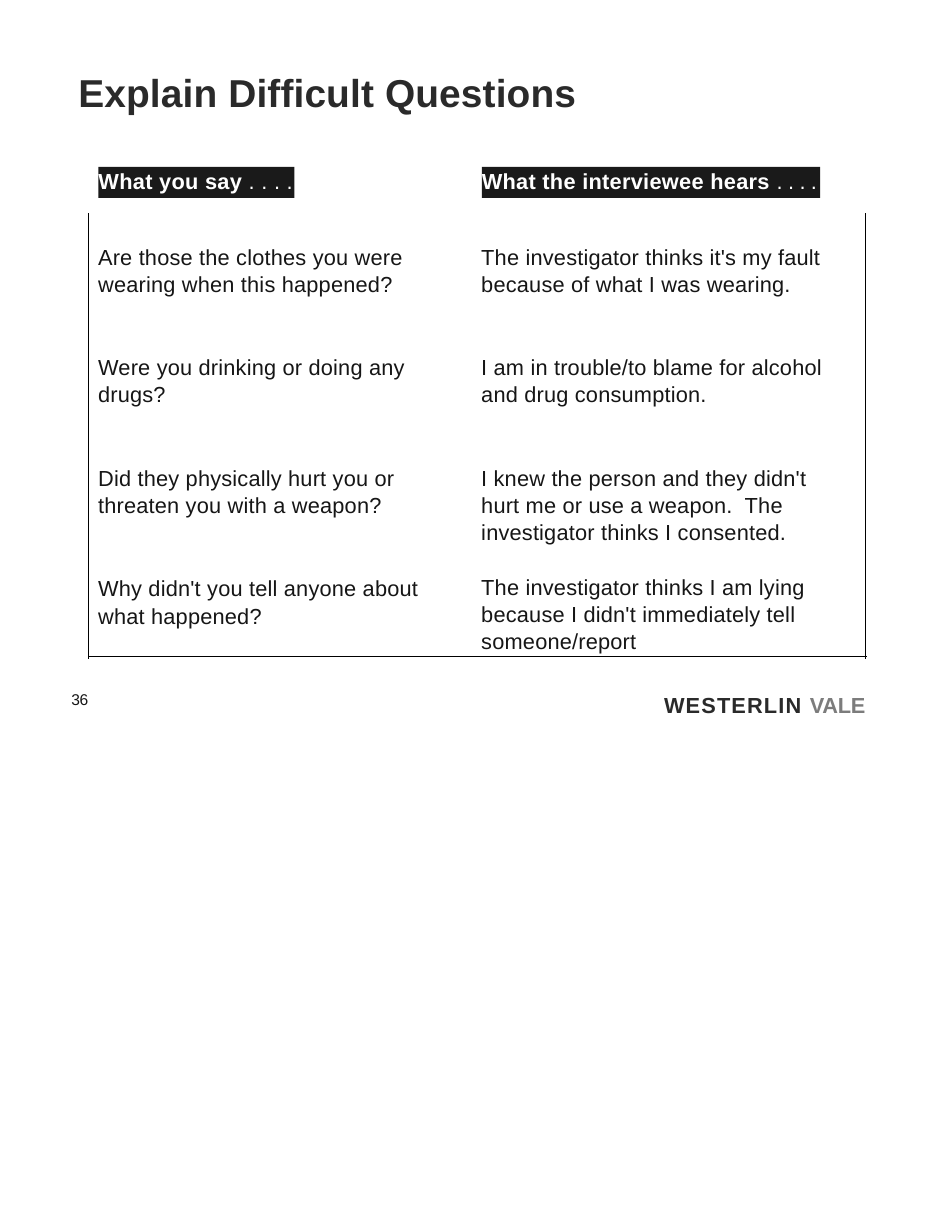
from pptx import Presentation
from pptx.dml.color import RGBColor
from pptx.enum.shapes import MSO_CONNECTOR, MSO_SHAPE
from pptx.enum.text import MSO_ANCHOR, MSO_AUTO_SIZE, PP_ALIGN
from pptx.util import Pt
from lxml.etree import SubElement
from pptx.oxml.ns import qn

HEX = {"title": "2A2A2A", "body": "161616", "bar": "1A1A1A",
       "light": "FFFFFF", "line": "000000", "gray": "7C7C7C"}
FONT = "Arial"
SIZE = 14
LEAD = 1.04

# Each entry: space before, text
SAY = [
    (0, "Are those the clothes you were wearing when this happened?"),
    (36.2, "Were you drinking or doing any drugs?"),
    (36.2, "Did they physically hurt you or threaten you with a weapon?"),
    (36.2, "Why didn't you tell anyone about what happened?"),
]
HEAR = [
    (0, "The investigator thinks it's my fault because of what I was wearing."),
    (36.2, "I am in trouble/to blame for alcohol and drug consumption."),
    (36.2, "I knew the person and they didn't hurt me or use a weapon.  "
           "The investigator thinks I consented."),
    (17.8, "The investigator thinks I am lying because I didn't immediately "
           "tell someone/report"),
]


def color(name):
    return RGBColor.from_string(HEX[name])


def add_run(para, text, tint, size=SIZE, bold=False, gap=0.12):
    run = para.add_run()
    run.text = text
    font = run.font
    font.name, font.size, font.bold = FONT, Pt(size), bold
    font.color.rgb = color(tint)
    run._r.get_or_add_rPr().set("spc", str(round(gap * 100)))


def set_frame(shape, wrap=True, left=0, top=0, base=0, anchor=MSO_ANCHOR.TOP):
    frame = shape.text_frame
    frame.auto_size = MSO_AUTO_SIZE.NONE
    frame.word_wrap = wrap
    frame.vertical_anchor = anchor
    frame.margin_left, frame.margin_top = Pt(left), Pt(top)
    frame.margin_right, frame.margin_bottom = 0, Pt(base)
    frame.paragraphs[0].alignment = PP_ALIGN.LEFT
    return frame


def add_box(slide, box, **opts):
    return set_frame(slide.shapes.add_textbox(*map(Pt, box)), **opts)


def add_title(slide, box):
    title = slide.shapes.title
    title.left, title.top, title.width, title.height = map(Pt, box)
    frame = set_frame(title, left=10.8, top=17.5)
    add_run(frame.paragraphs[0], "Explain Difficult Questions", "title", 25, True)


def add_line(slide, x1, y1, x2, y2, width):
    line = slide.shapes.add_connector(MSO_CONNECTOR.STRAIGHT, *map(Pt, (x1, y1, x2, y2)))
    line.line.color.rgb = color("line")
    line.line.width = Pt(width)
    SubElement(line._element.spPr, qn("a:effectLst"))


def add_border(slide, box):
    """Open-topped border whose sides run just past the base."""
    left, top, width, height = box
    right, end = left + width, top + height
    for x in (left, right):
        add_line(slide, x, end, x, top, 0.72)
    add_line(slide, left, end - 1.4, right + 0.8, end - 1.4, 0.96)


def add_head(slide, box, label, dots, gap):
    bar = slide.shapes.add_shape(MSO_SHAPE.RECTANGLE, *map(Pt, box))
    bar.shadow.inherit = False
    bar.fill.solid()
    bar.fill.fore_color.rgb = color("bar")
    bar.line.fill.background()
    frame = set_frame(bar, wrap=False, base=2.4, anchor=MSO_ANCHOR.MIDDLE)
    para = frame.paragraphs[0]
    add_run(para, label, "light", bold=True, gap=0.17)
    add_run(para, dots, "light", gap=gap)


def add_column(slide, box, items):
    frame = add_box(slide, box, left=0.5)
    for i, (space, text) in enumerate(items):
        para = frame.add_paragraph() if i else frame.paragraphs[0]
        para.line_spacing = LEAD
        if space:
            para.space_before = Pt(space)
        add_run(para, text, "body")


def add_footer(slide, box):
    left, top, width, height = box
    # Page number
    page = add_box(slide, (left, top + 12.9, 14, 13), wrap=False, left=0.5)
    add_run(page.paragraphs[0], "36", "body", 10, gap=-0.2)
    # Firm name
    firm = add_box(slide, (left + width - 142.6, top, 142.6, height), left=5, top=14.4)
    para = firm.paragraphs[0]
    para.line_spacing = Pt(16.5)
    add_run(para, "WESTERLIN ", "title", bold=True, gap=0.7)
    add_run(para, "VALE", "gray", bold=True, gap=-0.2)


def main():
    deck = Presentation()
    deck.slide_width, deck.slide_height = Pt(612), Pt(792)
    slide = deck.slides.add_slide(deck.slide_layouts[5])
    add_border(slide, (56.9, 136.8, 499.7, 286.6))
    add_title(slide, (39.6, 26.6, 532.8, 63.4))
    # Left column: the question
    add_head(slide, (63.3, 107.3, 126, 20), "What you say ", ". . . .", 0.17)
    add_column(slide, (62.6, 155.8, 211, 246), SAY)
    # Right column: how it is heard
    add_head(slide, (309.7, 107.3, 217.5, 20), "What the interviewee hears ", "....", 3.5)
    add_column(slide, (308.9, 155.8, 224, 263), HEAR)
    add_footer(slide, (45.4, 430.6, 519.1, 32.4))
    deck.save("out.pptx")


if __name__ == "__main__":
    main()
